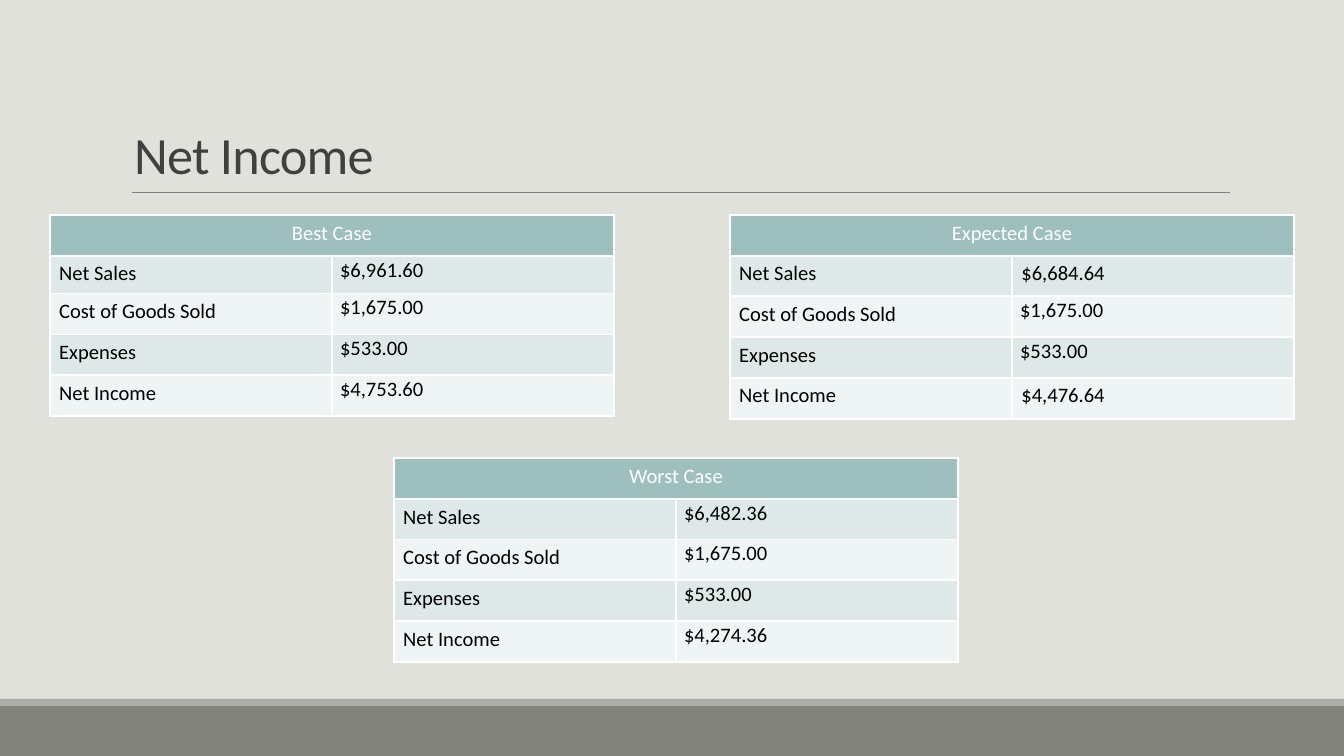
import pptx
import pptx.dml.color
import pptx.enum.shapes
import pptx.enum.text
import pptx.oxml
import pptx.oxml.ns
import pptx.util

Inches, Pt = pptx.util.Inches, pptx.util.Pt
ALIGN = pptx.enum.text.PP_ALIGN
SHAPE = pptx.enum.shapes.MSO_SHAPE.RECTANGLE
LINE = pptx.enum.shapes.MSO_CONNECTOR.STRAIGHT

WIDE = 10
HIGH = WIDE * 9 / 16
FONT = "Calibri"
TITLE = "Net Income"
ITEMS = ["Net Sales", "Cost of Goods Sold", "Expenses", "Net Income"]
# Padded rows hold amounts set with the same margins as the labels.
CASES = [
    dict(name="Best Case", left=0.37, top=1.6, first=0.28, padded=(),
         sums=["$6,961.60", "$1,675.00", "$533.00", "$4,753.60"]),
    dict(name="Expected Case", left=5.43, top=1.6, first=0.3, padded=(1, 4),
         sums=["$6,684.64", "$1,675.00", "$533.00", "$4,476.64"]),
    dict(name="Worst Case", left=2.93, top=3.41, first=0.3, padded=(),
         sums=["$6,482.36", "$1,675.00", "$533.00", "$4,274.36"]),
]
BANDS = [(5.25, HIGH - 5.25, "82847C"), (5.2, 0.05, "ACADA8")]
HEAD, STRIPES = "9DBFBE", ["EFF4F4", "DFE8E8"]
COL, ROW = 2.1, 1.52 / 5


def paint(fill, tone):
    fill.solid()
    fill.fore_color.rgb = pptx.dml.color.RGBColor.from_string(tone)


def style(para, size, tone):
    para.font.name = FONT
    para.font.size = Pt(size)
    para.font.bold = False
    paint(para.font.fill, tone)


def edge(cell):
    """Draw white borders on all four sides."""
    props = cell._tc.get_or_add_tcPr()
    space = pptx.oxml.ns.nsdecls("a")
    for side in "LRTB":
        props.append(pptx.oxml.parse_xml(
            f'<a:ln{side} {space} w="{Pt(1)}"><a:solidFill>'
            f'<a:srgbClr val="FFFFFF"/></a:solidFill></a:ln{side}>'))


def write(cell, text, tone, tight=False):
    side, end = (0.06, 0) if tight else (0.07, 0.04)
    cell.margin_left = cell.margin_right = Inches(side)
    cell.margin_top = cell.margin_bottom = Inches(end)
    para = cell.text_frame.paragraphs[0]
    para.text = text
    if tight:
        para.line_spacing = 1.07
    style(para, 11, tone)


def add_case(slide, case):
    count = len(ITEMS) + 1
    table = slide.shapes.add_table(
        count, 2, Inches(case["left"]), Inches(case["top"]),
        Inches(2 * COL), Inches(count * ROW)).table
    table.first_row = table.horz_banding = False
    for col in table.columns:
        col.width = Inches(COL)
    for row in table.rows:
        row.height = Inches(ROW)
    table.rows[1].height = Inches(case["first"])

    for num in range(count):
        for col in range(2):
            cell = table.cell(num, col)
            edge(cell)
            paint(cell.fill, STRIPES[num % 2] if num else HEAD)
    head = table.cell(0, 0)
    head.merge(table.cell(0, 1))
    write(head, case["name"], "FFFFFF")
    head.text_frame.paragraphs[0].alignment = ALIGN.CENTER
    for num, (item, amount) in enumerate(zip(ITEMS, case["sums"]), 1):
        write(table.cell(num, 0), item, "000000")
        write(table.cell(num, 1), amount, "000000", num not in case["padded"])


def add_frame(slide):
    """Add the bottom bands, the rule and the title."""
    paint(slide.background.fill, "E1E1DB")
    for top, high, tone in BANDS:
        band = slide.shapes.add_shape(
            SHAPE, 0, Inches(top), Inches(WIDE), Inches(high))
        band.shadow.inherit = False
        paint(band.fill, tone)
        band.line.fill.background()

    rule = slide.shapes.add_connector(
        LINE, Inches(0.98), Inches(1.43), Inches(9.15), Inches(1.43))
    paint(rule.line.fill, "808080")
    rule.line.width = Pt(0.5)
    rule._element.spPr.append(pptx.oxml.parse_xml(
        f'<a:effectLst {pptx.oxml.ns.nsdecls("a")}/>'))

    frame = slide.shapes.add_textbox(
        Inches(0.9), Inches(0.24), Inches(8.25), Inches(1.19)).text_frame
    frame.word_wrap = True
    frame.vertical_anchor = pptx.enum.text.MSO_ANCHOR.BOTTOM
    para = frame.paragraphs[0]
    para.text = TITLE
    para.line_spacing = 0.85
    style(para, 28, "404040")
    para.runs[0]._r.get_or_add_rPr().set("spc", "-40")


def main():
    deck = pptx.Presentation()
    deck.slide_width, deck.slide_height = Inches(WIDE), Inches(HIGH)
    slide = deck.slides.add_slide(deck.slide_layouts[6])
    add_frame(slide)
    for case in CASES:
        add_case(slide, case)
    deck.save("out.pptx")


if __name__ == "__main__":
    main()
